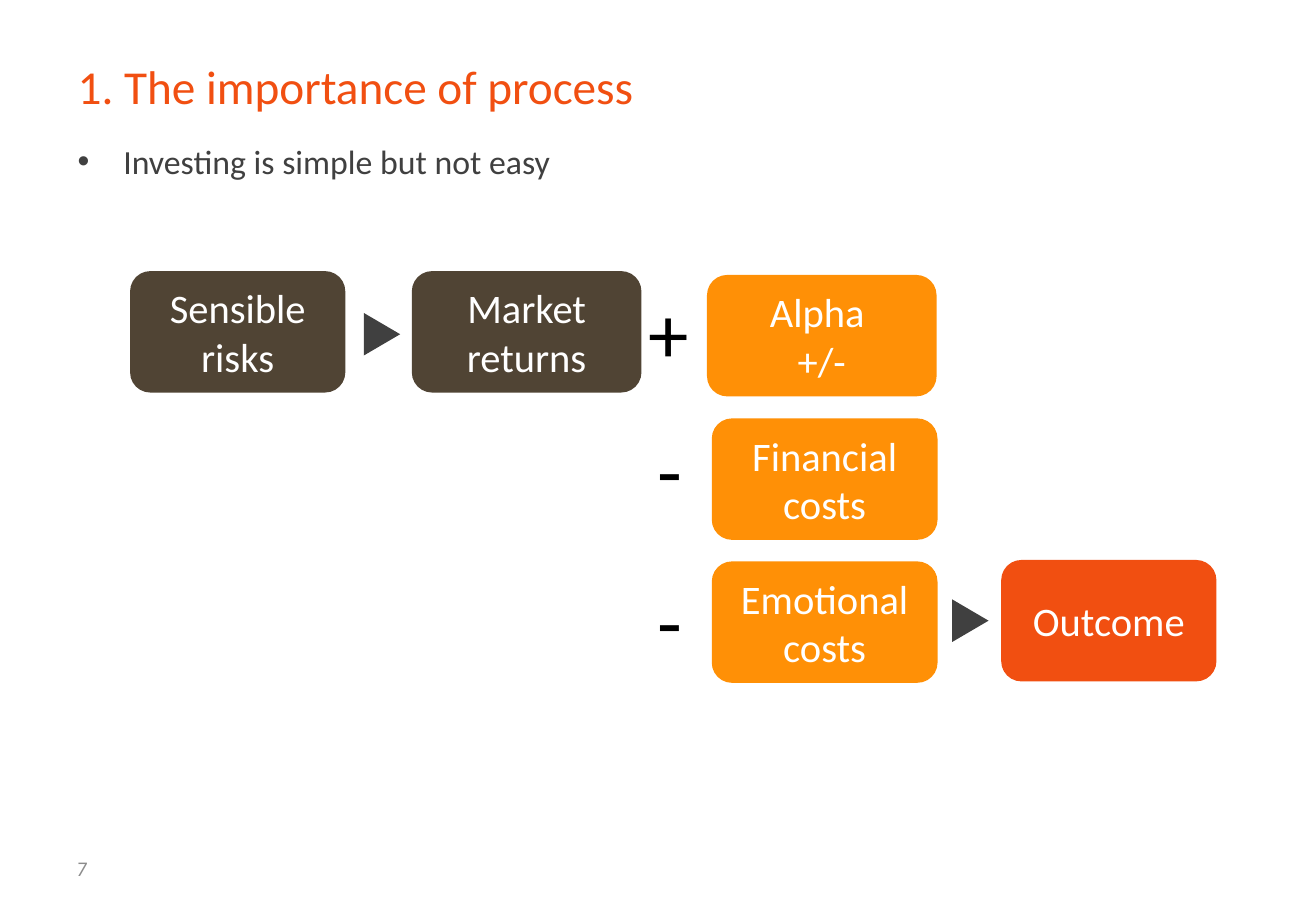
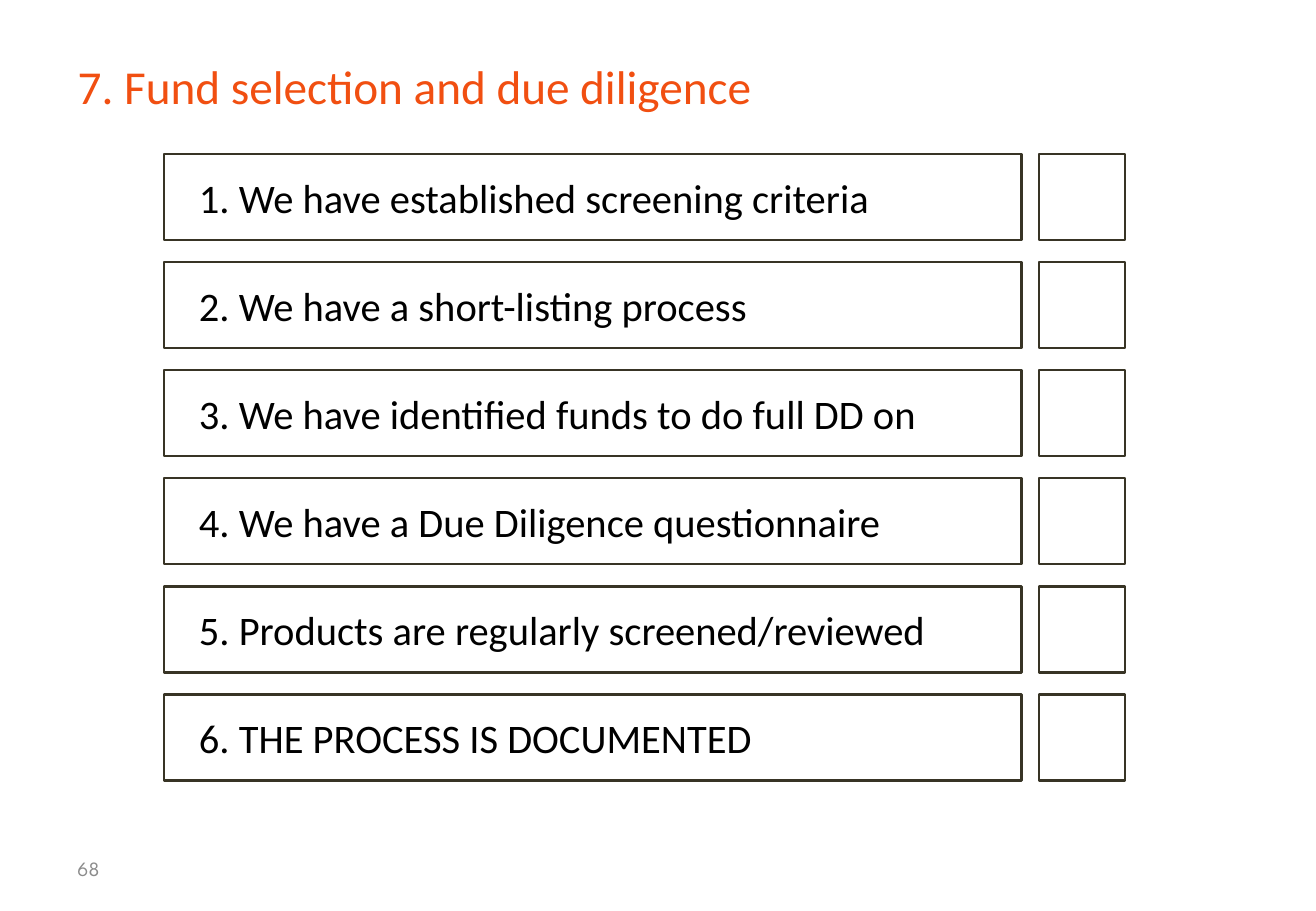
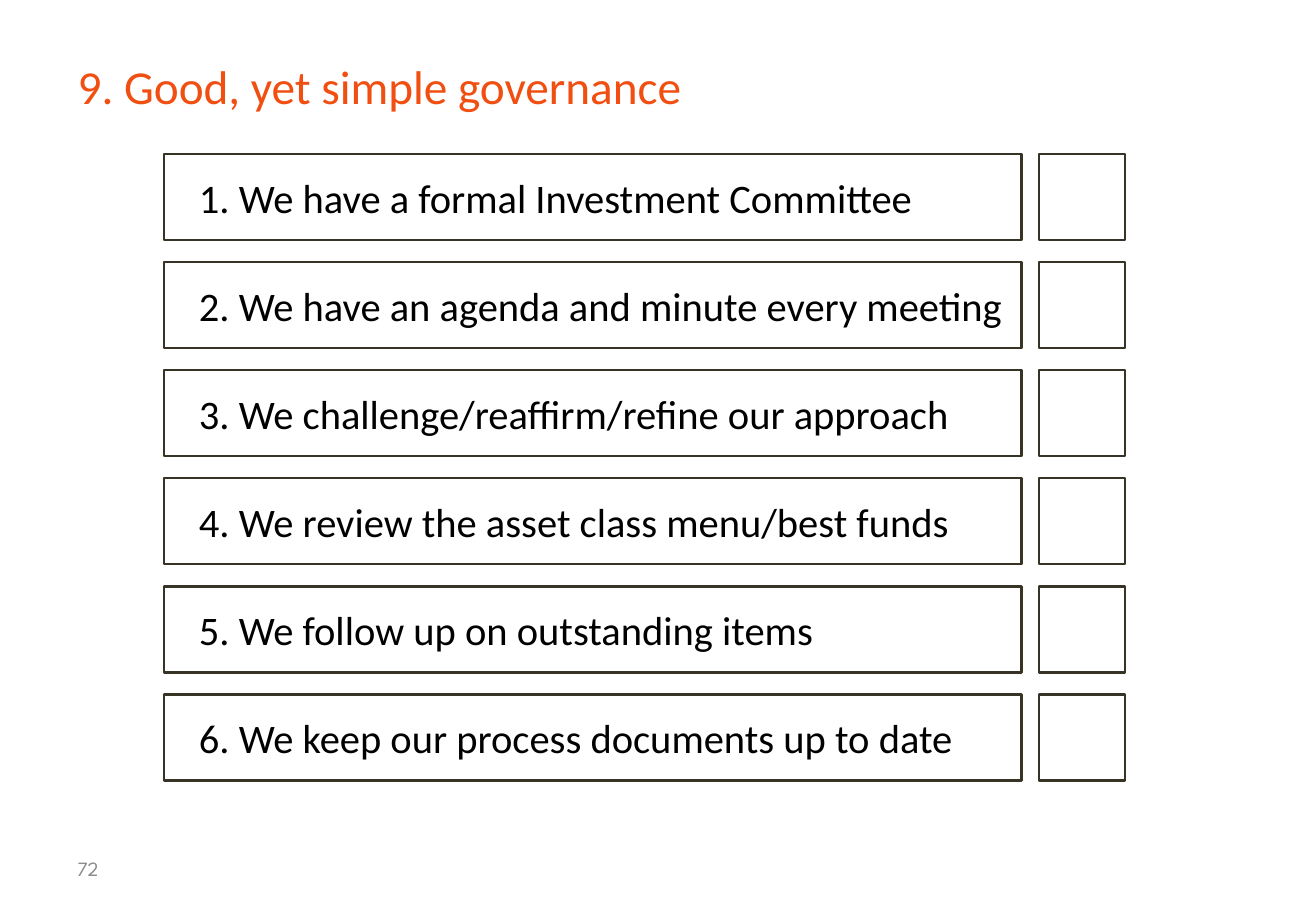
from collections import namedtuple

from pptx import Presentation
from pptx.dml.color import RGBColor
from pptx.enum.shapes import MSO_SHAPE as Preset
from pptx.enum.text import MSO_ANCHOR as Anchor, PP_ALIGN as Align
from pptx.util import Cm, Pt

ORANGE = RGBColor(0xF1, 0x4F, 0x11)
AMBER = RGBColor(0xFF, 0x90, 0x06)
BROWN = RGBColor(0x50, 0x44, 0x34)
OLIVE = RGBColor(0x38, 0x34, 0x25)
CHARCOAL = RGBColor(0x40, 0x40, 0x40)
GREY = RGBColor(0x8C, 0x8C, 0x8C)
BLACK = RGBColor(0x00, 0x00, 0x00)
WHITE = RGBColor(0xFF, 0xFF, 0xFF)

TEXT_FONT = "Calibri"
NUMBER_FONT = "League Spartan"
TITLE_LAYOUT, TITLE_ONLY_LAYOUT = 1, 5

Box = namedtuple("Box", "left top width height")

SLIDE_SIZE = Cm(27.51), Cm(19.05)
TITLE_BOX = Box(1.37, 0.76, 24.77, 2.06)
BODY_BOX = Box(1.37, 2.82, 24.77, 13.92)
NUMBER_BOX = Box(1.37, 17.65, 4.8, 1.02)
FLOW_BOX = Box(2.72, 5.67, 22.71, 8.6)
CHECKLIST_BOX = Box(3.43, 3.22, 20.09, 13.1)

FLOW_CARDS = [
    ("Sensible risks", BROWN, 0, 0, 4.5),
    ("Market returns", BROWN, 5.89, 0, 4.8),
    ("Alpha \n+/-", AMBER, 12.06, 0.08, 4.8),
    ("Financial costs", AMBER, 12.16, 3.08, 4.72),
    ("Emotional costs", AMBER, 12.16, 6.07, 4.72),
    ("Outcome", ORANGE, 18.21, 6.04, 4.5),
]
FLOW_SIGNS = [("+", 10.59, 0.12, 1.37), ("-", 10.77, 2.97, 1.04), ("-", 10.77, 6.14, 1.04)]
FLOW_ARROWS = [(4.82, 0.94), (17.12, 6.93)]

FUND_CHECKS = [
    "1. We have established screening criteria",
    "2. We have a short-listing process",
    "3. We have identified funds to do full DD on",
    "4. We have a Due Diligence questionnaire",
    "5. Products are regularly screened/reviewed",
    "6. THE PROCESS IS DOCUMENTED",
]
GOVERNANCE_CHECKS = [
    "1. We have a formal Investment Committee",
    "2. We have an agenda and minute every meeting",
    "3. We challenge/reaffirm/refine our approach",
    "4. We review the asset class menu/best funds",
    "5. We follow up on outstanding items",
    "6. We keep our process documents up to date",
]


def lengths(box):
    """Turn a box in centimetres into four lengths."""
    return [Cm(value) for value in box]


def place(placeholder, box):
    """Move a placeholder to a box."""
    placeholder.left, placeholder.top, placeholder.width, placeholder.height = lengths(box)


def write(frame, text, size=24, color=BLACK, font=TEXT_FONT, align=Align.LEFT,
          anchor=Anchor.MIDDLE, wrap=True, indent=None):
    """Fill a text frame with one paragraph per line of text."""
    frame.word_wrap = wrap
    frame.vertical_anchor = anchor
    for index, line in enumerate(text.split("\n")):
        paragraph = frame.add_paragraph() if index else frame.paragraphs[0]
        paragraph.alignment = align
        if indent is not None:
            paragraph._p.get_or_add_pPr().set("marL", str(Cm(indent)))
        run = paragraph.add_run()
        run.text = line
        run.font.size = Pt(size)
        run.font.name = font
        run.font.color.rgb = color


def draw(slide, preset, box, fill, outline=None):
    """Draw a flat preset shape, with an outline if a colour is given."""
    shape = slide.shapes.add_shape(preset, *lengths(box))
    shape.shadow.inherit = False
    shape.fill.solid()
    shape.fill.fore_color.rgb = fill
    if outline is None:
        shape.line.fill.background()
    else:
        shape.line.color.rgb = outline
        shape.line.width = Pt(1.5)
    return shape


def add_base_slide(deck, layout, title, number):
    """Add a slide with the shared title and page number."""
    slide = deck.slides.add_slide(deck.slide_layouts[layout])
    place(slide.shapes.title, TITLE_BOX)
    write(slide.shapes.title.text_frame, title, size=28, color=ORANGE)
    page = slide.shapes.add_textbox(*lengths(NUMBER_BOX))
    write(page.text_frame, str(number), size=12, color=GREY, font=NUMBER_FONT)
    return slide


def add_flow(slide, box):
    """Draw the path from risks to outcome."""
    for label, color, x, y, width in FLOW_CARDS:
        card = draw(slide, Preset.ROUNDED_RECTANGLE,
                    Box(box.left + x, box.top + y, width, 2.54), color)
        write(card.text_frame, label, color=WHITE, align=Align.CENTER)
    for symbol, x, y, width in FLOW_SIGNS:
        sign = slide.shapes.add_textbox(*lengths(Box(box.left + x, box.top + y, width, 2.31)))
        write(sign.text_frame, symbol, size=48, anchor=Anchor.TOP, wrap=False)
    for x, y in FLOW_ARROWS:
        arrow = draw(slide, Preset.ISOSCELES_TRIANGLE,
                     Box(box.left + x, box.top + y, 0.89, 0.76), CHARCOAL)
        arrow.rotation = 90


def add_checklist(slide, box, checks, side=1.8, gap=0.36):
    """Draw evenly spaced statements, each with a square tick box."""
    pitch = (box.height - side) / (len(checks) - 1)
    for index, check in enumerate(checks):
        top = box.top + index * pitch
        statement = draw(slide, Preset.RECTANGLE,
                         Box(box.left, top, box.width - side - gap, side), WHITE, OLIVE)
        write(statement.text_frame, check, indent=0.48)
        draw(slide, Preset.RECTANGLE,
             Box(box.left + box.width - side, top, side, side), WHITE, OLIVE)


def add_process_slide(deck):
    """Add the slide on the importance of process."""
    slide = add_base_slide(deck, TITLE_LAYOUT, "1. The importance of process", 7)
    body = slide.placeholders[1]
    place(body, BODY_BOX)
    write(body.text_frame, "Investing is simple but not easy", size=20, color=CHARCOAL,
          anchor=Anchor.TOP)
    add_flow(slide, FLOW_BOX)


def add_checklist_slide(deck, title, number, checks):
    """Add a slide that holds one checklist."""
    slide = add_base_slide(deck, TITLE_ONLY_LAYOUT, title, number)
    add_checklist(slide, CHECKLIST_BOX, checks)


def main():
    """Build and save the deck."""
    deck = Presentation()
    deck.slide_width, deck.slide_height = SLIDE_SIZE
    add_process_slide(deck)
    add_checklist_slide(deck, "7. Fund selection and due diligence", 68, FUND_CHECKS)
    add_checklist_slide(deck, "9. Good, yet simple governance", 72, GOVERNANCE_CHECKS)
    deck.save("out.pptx")


if __name__ == "__main__":
    main()
